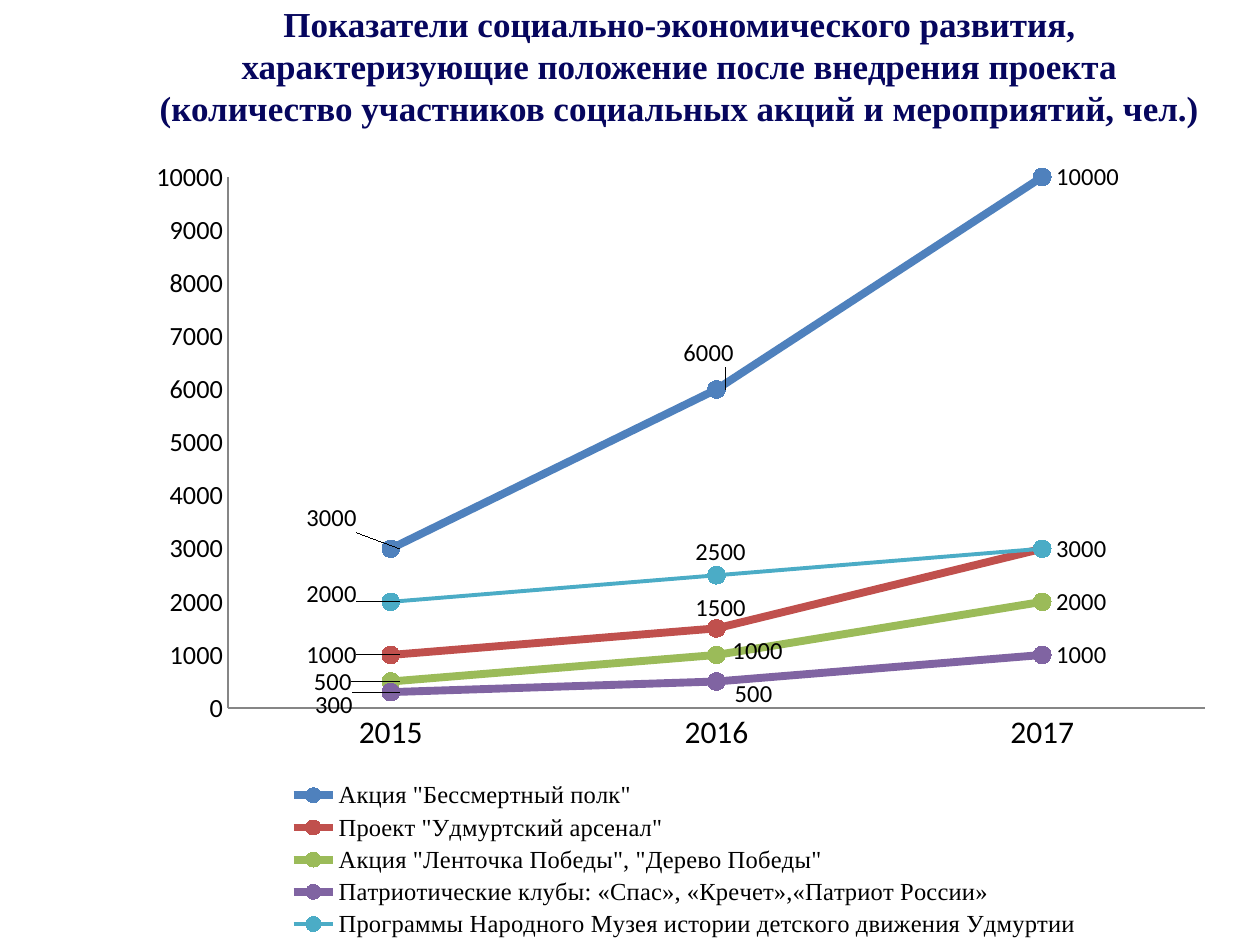
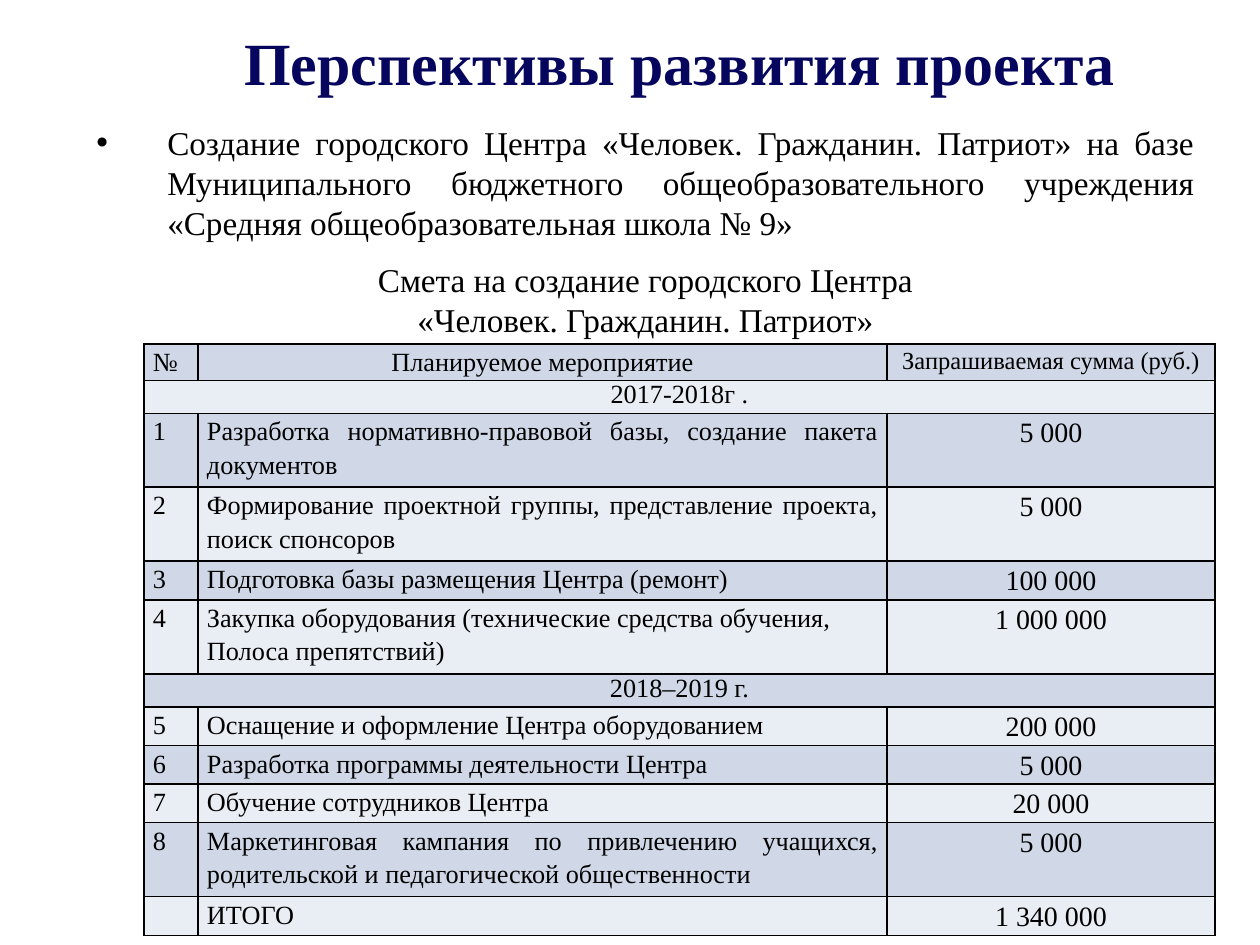
from pptx import Presentation
from pptx.chart.data import CategoryChartData as ChartData
from pptx.dml.color import RGBColor as RGB
from pptx.enum.chart import XL_CHART_TYPE as Kind, XL_LABEL_POSITION as Spot
from pptx.enum.chart import XL_LEGEND_POSITION as Side, XL_MARKER_STYLE as Mark
from pptx.enum.chart import XL_TICK_MARK as Tick
from pptx.enum.text import MSO_ANCHOR as Anchor, PP_ALIGN as Align
from pptx.oxml import parse_xml
from pptx.oxml.ns import nsdecls
from pptx.util import Pt

PX = 914400 / 126
NAVY = RGB(0x06, 0x06, 0x5E)
BLACK = RGB(0, 0, 0)
GRAY = RGB(0x86, 0x86, 0x86)
BLUE = RGB(0x4F, 0x81, 0xBD)
RED = RGB(0xC0, 0x50, 0x4D)
GREEN = RGB(0x9B, 0xBB, 0x59)
PURPLE = RGB(0x80, 0x64, 0xA2)
TEAL = RGB(0x4B, 0xAC, 0xC6)
BANDS = RGB(0xD0, 0xD8, 0xE8), RGB(0xE9, 0xED, 0xF4)
SERIF, SANS = "Times New Roman", "Calibri"


def px(*nums):
    """Turn pixel lengths into a list of EMU."""
    return [round(n * PX) for n in nums]


def write(par, text, size=15, color=BLACK, bold=False, align=Align.CENTER,
          line=None, before=None):
    par.text = text
    par.alignment = align
    if line:
        par.line_spacing = line
    if before:
        par.space_before = Pt(before)
    font = par.font
    font.name, font.size, font.bold = SERIF, Pt(size), bold
    font.color.rgb = color


deck = Presentation()
deck.slide_width, deck.slide_height = px(1260, 945)

# Slides and their titles
titles = [
    ("Показатели социально-экономического развития, характеризующие положение "
     "после внедрения проекта (количество участников социальных акций и "
     "мероприятий, чел.)", 20, -14, 158),
    ("Перспективы развития проекта", 34.2, 38, 48),
]
slides = []
for text, size, top, height in titles:
    slide = deck.slides.add_slide(deck.slide_layouts[6])
    frame = slide.shapes.add_textbox(*px(134, top, 1091, height)).text_frame
    frame.word_wrap = True
    frame.vertical_anchor = Anchor.MIDDLE
    write(frame.paragraphs[0], text, size, NAVY, bold=True)
    slides.append(slide)
first, second = slides

# Line chart: name, values, colour, line width, label shifts in px by point
lines = [
    ('Акция "Бессмертный полк"', (3000, 6000, 10000), BLUE, 4.5,
     [(-98, -31), (-47, -37)]),
    ('Проект "Удмуртский арсенал"', (1000, 1500, 3000), RED, 4.5,
     [(-98, 0), (-35, -21)]),
    ('Акция "Ленточка Победы", "Дерево Победы"', (500, 1000, 2000), GREEN, 4.5,
     [(-91, 0), (2, -4)]),
    ("Патриотические клубы: «Спас», «Кречет»,«Патриот России»",
     (300, 500, 1000), PURPLE, 4.5, [(-89, 13), (4, 13)]),
    ("Программы Народного Музея истории детского движения Удмуртии",
     (2000, 2500, 3000), TEAL, 2.25, [(-98, -8), (-35, -23)]),
]
WIDE, HIGH = 1092, 800
data = ChartData()
data.categories = ["2015", "2016", "2017"]
for name, vals, *_ in lines:
    data.add_series(name, vals)
chart = first.shapes.add_chart(
    Kind.LINE_MARKERS, *px(134, 145, WIDE, HIGH), data).chart
chart.has_title = False
chart.font.name, chart.font.size = SANS, Pt(18)
chart.font.color.rgb = BLACK
chart.plots[0].vary_by_categories = False

for axis, size in (chart.category_axis, 18), (chart.value_axis, 15):
    axis.major_tick_mark = axis.minor_tick_mark = Tick.NONE
    axis.has_major_gridlines = False
    axis.tick_labels.font.size = Pt(size)
    axis.format.line.color.rgb = GRAY
    axis.format.line.width = Pt(0.75)
axis.minimum_scale, axis.maximum_scale, axis.major_unit = 0, 10000, 1000

chart.has_legend = True
legend = chart.legend
legend.position = Side.BOTTOM
legend.include_in_layout = False
legend.font.name, legend.font.size = SERIF, Pt(14)

for series, (name, vals, color, width, shifts) in zip(chart.series, lines):
    series.smooth = False
    series.format.line.color.rgb = color
    series.format.line.width = Pt(width)
    mark = series.marker
    mark.style, mark.size = Mark.CIRCLE, 10
    mark.format.fill.solid()
    mark.format.fill.fore_color.rgb = color
    mark.format.line.color.rgb = color
    labels = series.data_labels
    labels.show_value = True
    labels.position = Spot.RIGHT
    labels.font.size = Pt(14)
    for i, (dx, dy) in enumerate(shifts):
        label = series.points[i].data_label
        label.font.size = Pt(14)
        label.position = Spot.RIGHT
        node = labels._element.findall("{*}dLbl")[i]
        node.insert(1, parse_xml(
            f'<c:layout {nsdecls("c")}><c:manualLayout>'
            f'<c:x val="{dx / WIDE:.3f}"/><c:y val="{dy / HIGH:.3f}"/>'
            '</c:manualLayout></c:layout>'))
    if color == RED:  # hidden under the equal value of the last line
        node.addnext(parse_xml(
            f'<c:dLbl {nsdecls("c")}><c:idx val="2"/><c:delete val="1"/></c:dLbl>'))

root = chart.element.chart
spots = [
    (root.plotArea, 0, '<c:layoutTarget val="inner"/>', (94, 32, 977, 531)),
    (legend._element, 1, "", (151, 632, 800, 166)),
]
for node, at, target, (x, y, w, h) in spots:
    for old in node.findall("{*}layout"):
        node.remove(old)
    node.insert(at, parse_xml(
        f'<c:layout {nsdecls("c")}><c:manualLayout>{target}'
        '<c:xMode val="edge"/><c:yMode val="edge"/>'
        f'<c:x val="{x / WIDE:.3f}"/><c:y val="{y / HIGH:.3f}"/>'
        f'<c:w val="{w / WIDE:.3f}"/><c:h val="{h / HIGH:.3f}"/>'
        '</c:manualLayout></c:layout>'))

# Goal and table caption
frame = second.shapes.add_textbox(*px(84, 116, 1123, 258)).text_frame
frame.word_wrap = True
goal = frame.paragraphs[0]
props = goal._p.get_or_add_pPr()
hang, = px(71)
props.set("marL", str(hang))
props.set("indent", str(-hang))
props.append(parse_xml(f'<a:buFont {nsdecls("a")} typeface="Arial"/>'))
props.append(parse_xml(f'<a:buChar {nsdecls("a")} char="•"/>'))
write(goal, "Создание городского Центра «Человек. Гражданин. Патриот» на базе "
      "Муниципального бюджетного общеобразовательного учреждения «Средняя "
      "общеобразовательная школа № 9»", 19, align=Align.JUSTIFY)
write(frame.add_paragraph(), "Смета на создание городского Центра", 19, before=10)
write(frame.add_paragraph(), "«Человек. Гражданин. Патриот»", 19)

# Budget table: row height and cells; a single cell spans the row
rows = [
    (35, "№", "Планируемое мероприятие", "Запрашиваемая сумма (руб.)"),
    (33, "2017-2018г ."),
    (74, "1", "Разработка нормативно-правовой базы, создание пакета документов",
     "5 000"),
    (74, "2", "Формирование проектной группы, представление проекта, "
     "поиск спонсоров", "5 000"),
    (38, "3", "Подготовка базы размещения Центра (ремонт)", "100 000"),
    (74, "4", "Закупка оборудования (технические средства обучения, "
     "Полоса препятствий)", "1 000 000"),
    (33, "2018–2019 г."),
    (38, "5", "Оснащение и оформление Центра оборудованием", "200 000"),
    (38, "6", "Разработка программы деятельности Центра", "5 000"),
    (38, "7", "Обучение сотрудников Центра", "20 000"),
    (74, "8", "Маркетинговая кампания по привлечению учащихся, родительской "
     "и педагогической общественности", "5 000"),
    (38, "", "ИТОГО", "1 340 000"),
]
table = second.shapes.add_table(len(rows), 3, *px(144, 344, 1071, 587)).table
for col, width in zip(table.columns, px(54, 689, 328)):
    col.width = width
for r, (height, *texts) in enumerate(rows):
    table.rows[r].height, = px(height)
    span = len(texts) == 1
    for c in range(3):
        cell = table.cell(r, c)
        cell.margin_left = cell.margin_right = px(9)[0]
        cell.margin_top = cell.margin_bottom = 0
        for edge in "LRTB":
            cell._tc.get_or_add_tcPr().append(parse_xml(
                f'<a:ln{edge} {nsdecls("a")} w="12700"><a:solidFill>'
                f'<a:srgbClr val="{BLACK}"/></a:solidFill></a:ln{edge}>'))
        cell.fill.solid()
        cell.fill.fore_color.rgb = BANDS[r % 2]
        size, align = 15, Align.JUSTIFY
        if c == 2:
            size = 16 if r else 14
        if span or c == 2 or (r == 0 and c == 1):
            align = Align.CENTER
        elif r == 5 and c == 1:
            align = Align.LEFT
        text = texts[c] if c < len(texts) else ""
        write(cell.text_frame.paragraphs[0], text, size, align=align,
              line=None if span else 1.15)
    if span:
        table.cell(r, 0).merge(table.cell(r, 2))

deck.save("out.pptx")
